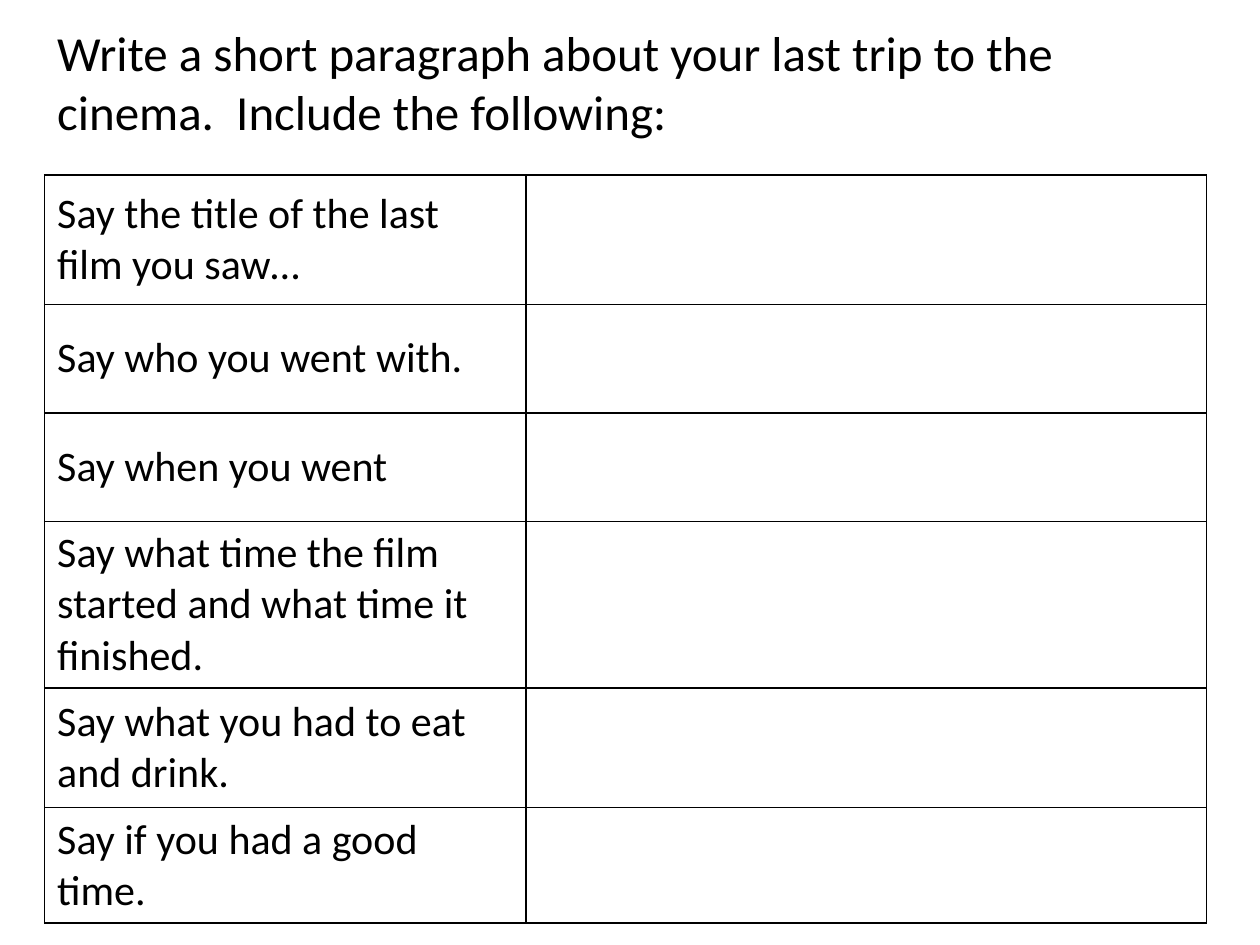
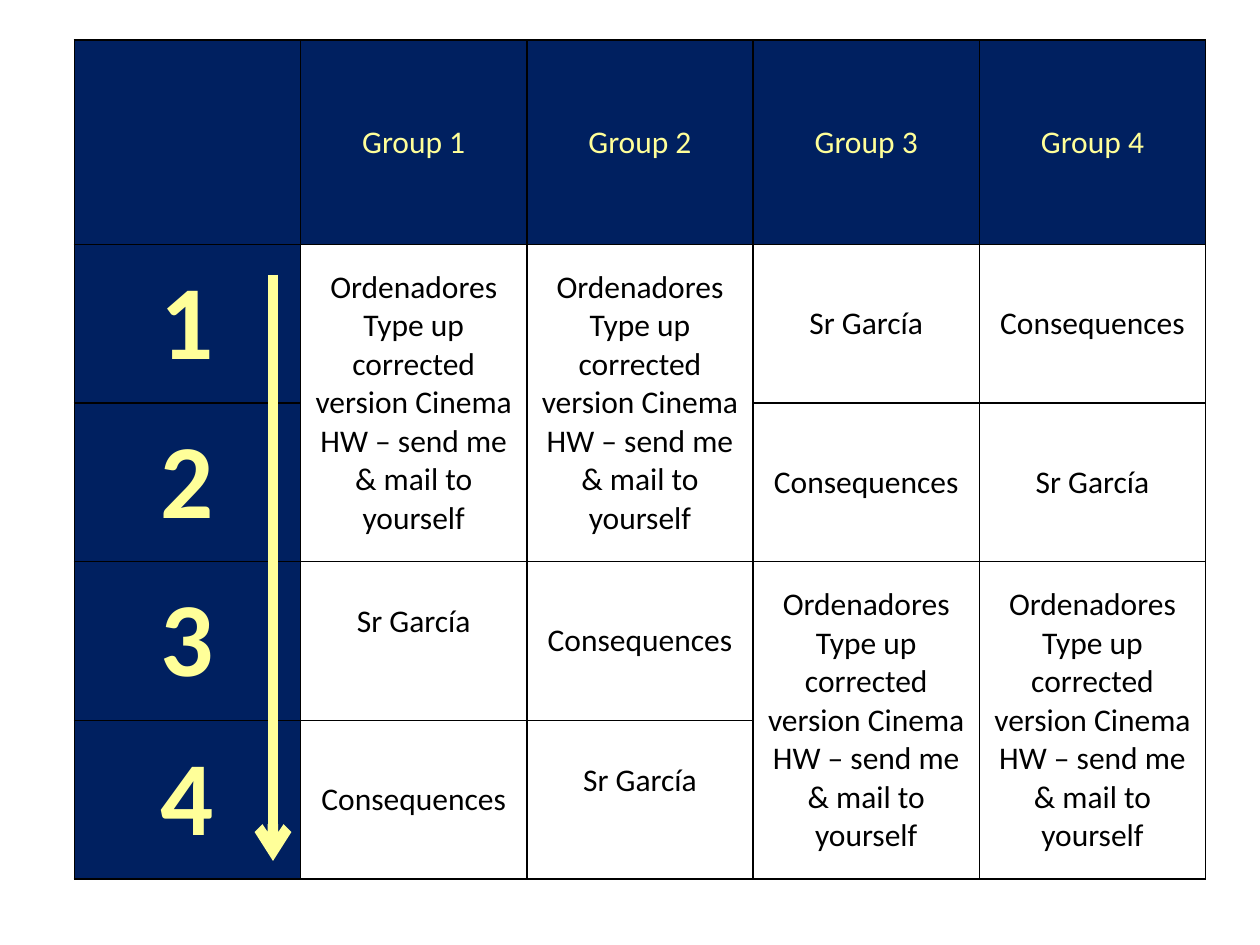
from lxml.etree import SubElement
from pptx import Presentation
from pptx.dml.color import RGBColor
from pptx.enum.shapes import MSO_CONNECTOR
from pptx.enum.text import MSO_ANCHOR, MSO_AUTO_SIZE, PP_ALIGN
from pptx.oxml.ns import qn
from pptx.util import Pt

BLACK = RGBColor(0x00, 0x00, 0x00)
NAVY = RGBColor(0x00, 0x20, 0x60)
YELLOW = RGBColor(0xFF, 0xFF, 0x99)
FONT = "Calibri"
TITLE_ONLY, BLANK = 5, 6

# Text formats
TITLE = {"size": Pt(28), "bold": False}
PROMPT = {"size": Pt(24), "bold": False}
TASK = {"size": Pt(18), "bold": False}
STEP = {"size": Pt(60), "bold": True}

# Slide 1: prompts with their row heights
PROMPTS = [
    ("Say the title of the last film you saw…", 74),
    ("Say who you went with.", 62),
    ("Say when you went", 62),
    ("Say what time the film started and what time it finished.", 95),
    ("Say what you had to eat and drink.", 68.5),
    ("Say if you had a good time.", 66),
]

# Slide 2: rotation of the groups (None lies under a merged cell)
COMPUTERS = "Ordenadores\vType up corrected version Cinema HW – send me & mail to yourself"
TEACHER = "Sr García"
GAME = "Consequences"
ROTATION = [
    ["", "Group 1", "Group 2", "Group 3", "Group 4"],
    ["1", COMPUTERS, COMPUTERS, TEACHER, GAME],
    ["2", None, None, GAME, TEACHER],
    ["3", TEACHER, GAME, COMPUTERS, COMPUTERS],
    ["4", GAME, TEACHER, None, None],
]
RAISED = {(3, 1), (4, 2)}  # cells whose text sits above the middle


def set_text(tf, text, style, color=BLACK, align=PP_ALIGN.LEFT):
    p = tf.paragraphs[0]
    p.text = text
    p.alignment = align
    for r in p.runs:
        for name, value in style.items():
            setattr(r.font, name, value)
        r.font.name = FONT
        r.font.color.rgb = color


def add_title(s, text, left, top, width, height):
    title = s.shapes.title
    box = {"left": left, "top": top, "width": width, "height": height}
    for name, value in box.items():
        setattr(title, name, Pt(value))
    tf = title.text_frame
    tf.word_wrap = True
    tf.auto_size = MSO_AUTO_SIZE.NONE
    tf.vertical_anchor = MSO_ANCHOR.TOP
    set_text(tf, text, TITLE)


def set_cell(cell, fill=None):
    """Anchor the cell in the middle, draw its borders and fill it."""
    cell.vertical_anchor = MSO_ANCHOR.MIDDLE
    tcPr = cell._tc.get_or_add_tcPr()
    for side in ("a:lnL", "a:lnR", "a:lnT", "a:lnB"):
        ln = SubElement(tcPr, qn(side), w=str(Pt(1)))
        solid = SubElement(ln, qn("a:solidFill"))
        SubElement(solid, qn("a:srgbClr"), val=str(BLACK))
    if fill is None:
        cell.fill.background()
    else:
        cell.fill.solid()
        cell.fill.fore_color.rgb = fill


def add_grid(s, left, top, widths, heights):
    frame = s.shapes.add_table(len(heights), len(widths), Pt(left), Pt(top),
                               Pt(sum(widths)), Pt(sum(heights)))
    table = frame.table
    table.first_row = table.horz_banding = False
    for column, width in zip(table.columns, widths):
        column.width = Pt(width)
    for row, height in zip(table.rows, heights):
        row.height = Pt(height)
    return table


def add_arrow(s, x, top, bottom):
    arrow = s.shapes.add_connector(MSO_CONNECTOR.STRAIGHT, Pt(x), Pt(top), Pt(x), Pt(bottom))
    arrow.line.color.rgb = YELLOW
    arrow.line.width = Pt(6)
    SubElement(arrow.line._get_or_add_ln(), qn("a:tailEnd"), type="arrow")
    SubElement(arrow._element.spPr, qn("a:effectLst"))


def build_writing_task(prs):
    s = prs.slides.add_slide(prs.slide_layouts[TITLE_ONLY])
    table = add_grid(s, 25.5, 100, [275, 389], [height for _, height in PROMPTS])
    for i, (prompt, _) in enumerate(PROMPTS):
        set_text(table.cell(i, 0).text_frame, prompt, PROMPT)
    for cell in table.iter_cells():
        set_cell(cell)
    add_title(s, "Write a short paragraph about your last trip to the cinema.  "
              "Include the following:", 25.5, 9.5, 669, 75)


def build_rotation(prs):
    s = prs.slides.add_slide(prs.slide_layouts[BLANK])
    table = add_grid(s, 42.5, 23, [129.3] * 5, [116.6] + [90.7] * 4)
    for i, row in enumerate(ROTATION):
        for j, text in enumerate(row):
            cell = table.cell(i, j)
            header = i == 0 or j == 0
            set_cell(cell, NAVY if header else None)
            if text:
                set_text(cell.text_frame, text, STEP if j == 0 else TASK,
                         YELLOW if header else BLACK, PP_ALIGN.CENTER)
            if text == COMPUTERS:
                cell.merge(table.cell(i + 1, j))
            if (i, j) in RAISED:
                cell.margin_bottom = Pt(25.6)
    # Order of the lesson
    add_arrow(s, 156, 157, 492)


def main():
    prs = Presentation()
    prs.slide_width, prs.slide_height = Pt(720), Pt(540)
    build_writing_task(prs)
    build_rotation(prs)
    prs.save("out.pptx")


if __name__ == "__main__":
    main()
